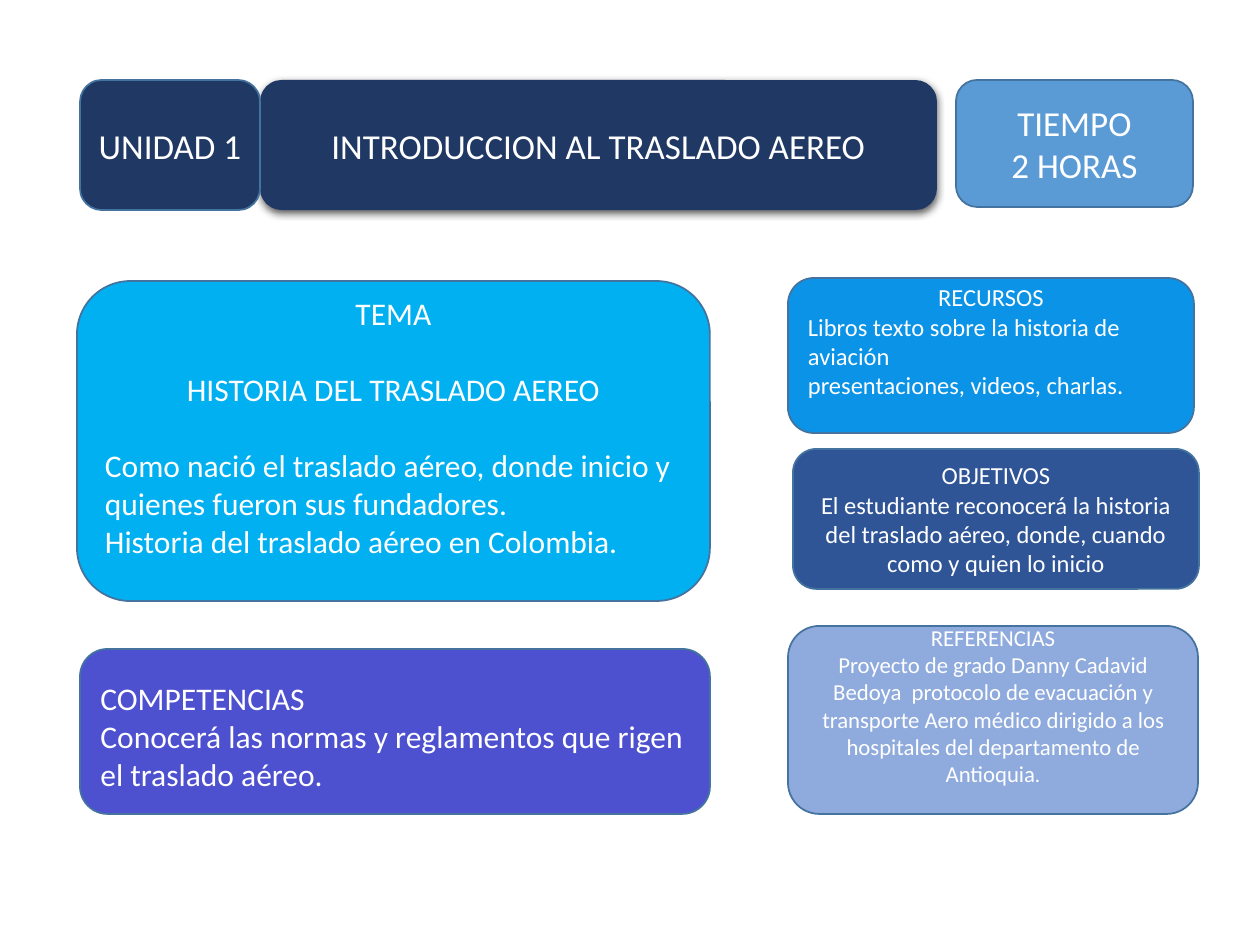
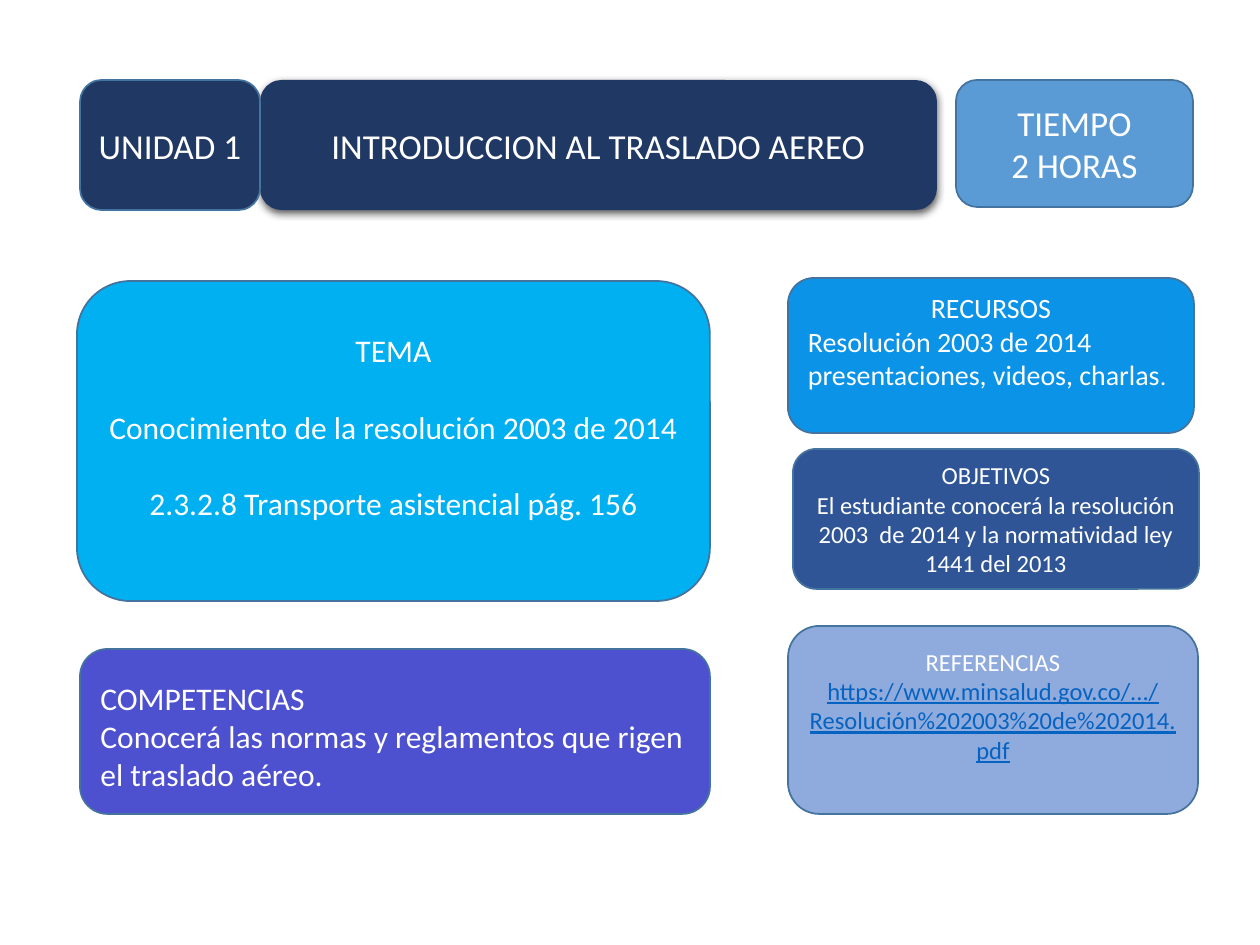
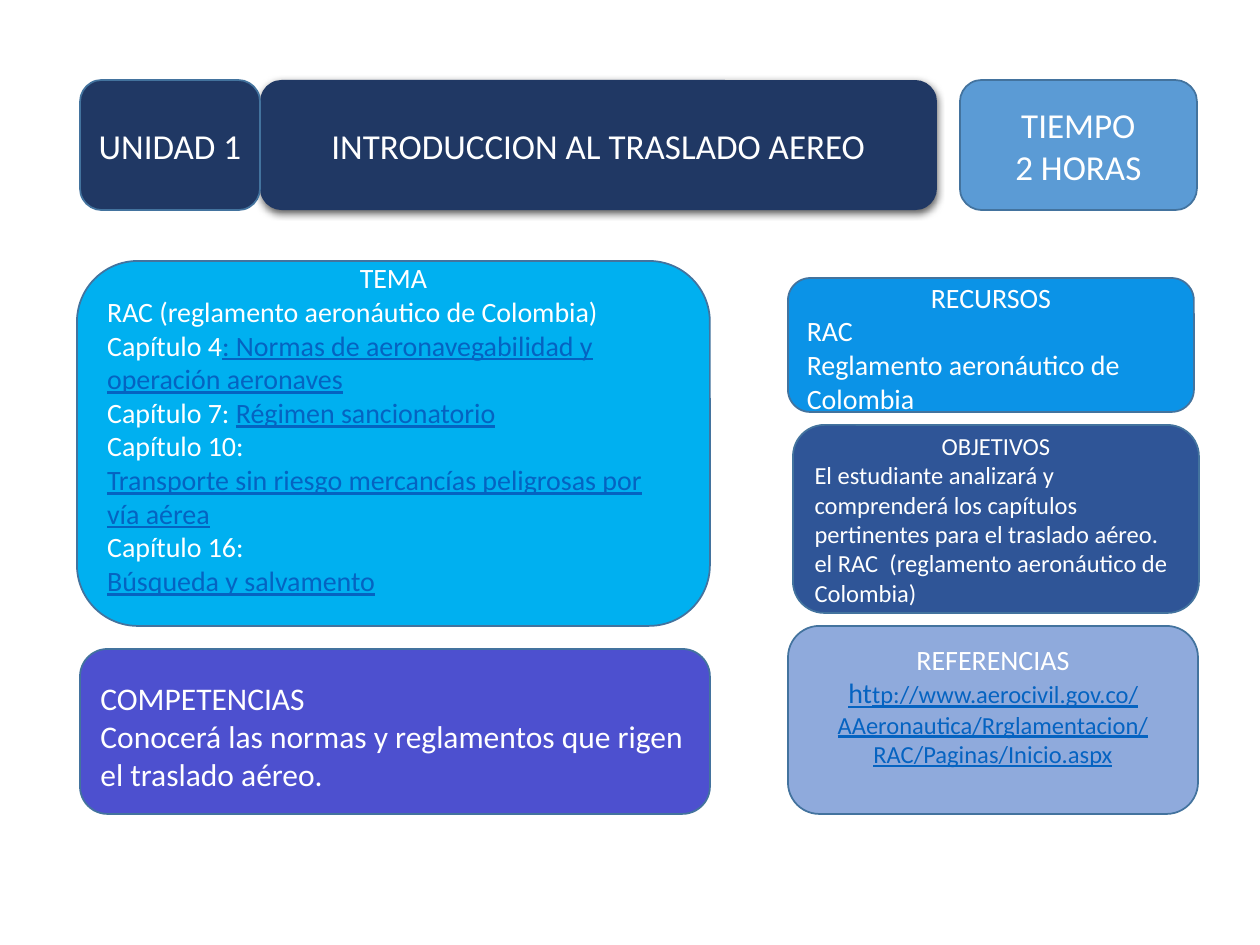
from dataclasses import dataclass
from typing import Optional

import pptx
import pptx.dml.color
import pptx.enum.shapes
import pptx.enum.text
import pptx.oxml
import pptx.oxml.ns
import pptx.util

EMU_PER_PX = 914400 / 126
CENTER = pptx.enum.text.PP_ALIGN.CENTER
LEFT = pptx.enum.text.PP_ALIGN.LEFT


@dataclass(frozen=True)
class Theme:
    font: str = "Calibri"
    navy: str = "203864"
    time: str = "5B9BD5"
    topic: str = "00B0F0"
    skills: str = "4D50CF"
    resources: str = "0B93E7"
    goals: str = "2F5597"
    references: str = "8FAADC"
    border: str = "43739E"
    text: str = "FFFFFF"
    link: str = "0563C1"
    header_size: int = 20
    large: int = 18
    medium: int = 16
    small: int = 14
    compact: int = 13
    tiny: int = 12
    section_gap: int = 22
    inset: int = 6
    foot: int = 29


THEME = Theme()


@dataclass(frozen=True)
class Phrase:
    text: str
    link: bool = False
    size: Optional[int] = None


@dataclass(frozen=True)
class Line:
    phrases: tuple
    align: int = LEFT
    gap: int = 0


def left(*phrases, gap=0, align=LEFT):
    return Line(tuple(p if isinstance(p, Phrase) else Phrase(p) for p in phrases),
                align, gap)


def centered(*phrases, gap=0):
    return left(*phrases, gap=gap, align=CENTER)


def link(text, size=None):
    return Phrase(text, True, size)


def px(length):
    return pptx.util.Emu(round(length * EMU_PER_PX))


def rgb(color):
    return pptx.dml.color.RGBColor.from_string(color)


def write_line(paragraph, line, size):
    paragraph.alignment = line.align
    paragraph.space_before = pptx.util.Pt(line.gap)
    for phrase in line.phrases:
        run = paragraph.add_run()
        run.text = phrase.text
        run.font.name = THEME.font
        run.font.size = pptx.util.Pt(phrase.size or size)
        run.font.color.rgb = rgb(THEME.link if phrase.link else THEME.text)
        run.font.underline = phrase.link


def add_card(slide, box, fill, size, lines, head=0, foot=0, border=True):
    """Draw a rounded card; head and foot reserve px above and below the text."""
    card = slide.shapes.add_shape(
        pptx.enum.shapes.MSO_SHAPE.ROUNDED_RECTANGLE, *map(px, box))
    card.shadow.inherit = False
    card.fill.solid()
    card.fill.fore_color.rgb = rgb(fill)
    if border:
        card.line.color.rgb = rgb(THEME.border)
        card.line.width = pptx.util.Pt(1)
    else:
        card.line.fill.background()
    frame = card.text_frame
    frame.word_wrap = True
    frame.vertical_anchor = pptx.enum.text.MSO_ANCHOR.MIDDLE
    frame.margin_top = px(THEME.inset + head)
    frame.margin_bottom = px(THEME.inset + foot)
    for index, line in enumerate(lines):
        paragraph = frame.add_paragraph() if index else frame.paragraphs[0]
        write_line(paragraph, line, size)
    return card


def add_drop_shadow(shape):
    effects = shape._element.spPr.find(pptx.oxml.ns.qn("a:effectLst"))
    effects.append(pptx.oxml.parse_xml(
        f'<a:outerShdw {pptx.oxml.ns.nsdecls("a")} blurRad="57150" dist="19050" '
        'dir="5400000" algn="ctr" rotWithShape="0"><a:srgbClr val="000000">'
        '<a:alpha val="63000"/></a:srgbClr></a:outerShdw>'))


def add_header(slide, time_box):
    title = add_card(slide, (260, 80, 677, 130), THEME.navy, THEME.header_size,
                     [centered("INTRODUCCION AL TRASLADO AEREO")], border=False)
    add_drop_shadow(title)
    add_card(slide, time_box, THEME.time, THEME.header_size,
             [centered("TIEMPO"), centered("2 HORAS")])
    add_card(slide, (80, 80, 180, 130), THEME.navy, THEME.header_size,
             [centered("UNIDAD 1")])


def add_topic(slide, lines, size=THEME.large, top=281, height=320):
    add_card(slide, (77, top, 633, height), THEME.topic, size,
             [centered("TEMA"), *lines], foot=THEME.foot)


def add_skills(slide):
    add_card(slide, (80, 649, 630, 165), THEME.skills, THEME.large,
             [left("COMPETENCIAS"),
              left("Conocerá las normas y reglamentos que rigen el traslado aéreo.")],
             head=38, foot=THEME.foot)


def add_resources(slide, lines, size=THEME.medium, height=155, head=0):
    add_card(slide, (788, 278, 406, height), THEME.resources, size,
             [centered("RECURSOS"), *lines], head=head, foot=THEME.foot)


def add_goals(slide, line, top=449, height=140):
    add_card(slide, (793, top, 406, height), THEME.goals, THEME.small,
             [centered("OBJETIVOS"), line])


def add_references(slide, line, size):
    add_card(slide, (788, 626, 410, 188), THEME.references, size,
             [centered("REFERENCIAS"), line], foot=THEME.foot)


def add_unit_slide(deck, time_box=(956, 80, 237, 127)):
    slide = deck.slides.add_slide(deck.slide_layouts[6])
    add_header(slide, time_box)
    add_skills(slide)
    return slide


def build_history(deck):
    slide = add_unit_slide(deck)
    add_topic(slide, [
        centered("HISTORIA DEL TRASLADO AEREO", gap=THEME.section_gap),
        left("Como nació el traslado aéreo, donde inicio y quienes "
             "fueron sus fundadores.", gap=THEME.section_gap),
        left("Historia del traslado aéreo en Colombia."),
    ])
    add_resources(slide, [left("Libros texto sobre la historia de aviación"),
                          left("presentaciones, videos, charlas.")], THEME.small)
    add_goals(slide, centered("El estudiante reconocerá la historia del traslado "
                              "aéreo, donde, cuando como y quien lo inicio"))
    add_references(slide, centered(
        "Proyecto de grado Danny Cadavid Bedoya  protocolo de evacuación y "
        "transporte Aero médico dirigido a los hospitales del departamento de "
        "Antioquia", Phrase(".", size=THEME.tiny)), THEME.compact)


def build_resolution(deck):
    slide = add_unit_slide(deck)
    add_topic(slide, [
        centered("Conocimiento de la resolución 2003 de 2014", gap=THEME.section_gap),
        centered("2.3.2.8 Transporte asistencial pág. 156", gap=THEME.section_gap),
    ])
    add_resources(slide, [left("Resolución 2003 de 2014"),
                          left("presentaciones, videos, charlas",
                               Phrase(".", size=THEME.small))])
    add_goals(slide, centered("El estudiante conocerá la resolución 2003  de 2014 "
                              "y la normatividad ley 1441 del 2013"))
    add_references(slide, centered(link(
        "https://www.minsalud.gov.co/.../Resolución%202003%20de%202014.pdf")),
        THEME.small)


def build_regulations(deck):
    slide = add_unit_slide(deck, (960, 80, 237, 130))
    add_topic(slide, [
        left("RAC (reglamento aeronáutico de Colombia)"),
        left("Capítulo 4", link(": Normas de aeronavegabilidad y operación aeronaves")),
        left("Capítulo 7: ", link("Régimen sancionatorio")),
        left("Capítulo 10:"),
        left(link("Transporte sin riesgo mercancías peligrosas por vía aérea")),
        left("Capítulo 16:"),
        left(link("Búsqueda y salvamento")),
    ], THEME.medium, top=261, height=365)
    add_resources(slide, [left("RAC"), left("Reglamento aeronáutico de Colombia")],
                  height=134, head=34)
    add_goals(slide, left("El estudiante analizará y comprenderá los capítulos "
                          "pertinentes para el traslado aéreo. el RAC  (reglamento "
                          "aeronáutico de Colombia)"), top=425, height=188)
    add_references(slide, centered(link("ht"), link(
        "tp://www.aerocivil.gov.co/AAeronautica/Rrglamentacion/RAC/Paginas/Inicio.aspx",
        THEME.small)), THEME.medium)


def main():
    deck = pptx.Presentation()
    deck.slide_width, deck.slide_height = px(1260), px(945)
    build_history(deck)
    build_resolution(deck)
    build_regulations(deck)
    deck.save("out.pptx")


if __name__ == "__main__":
    main()
